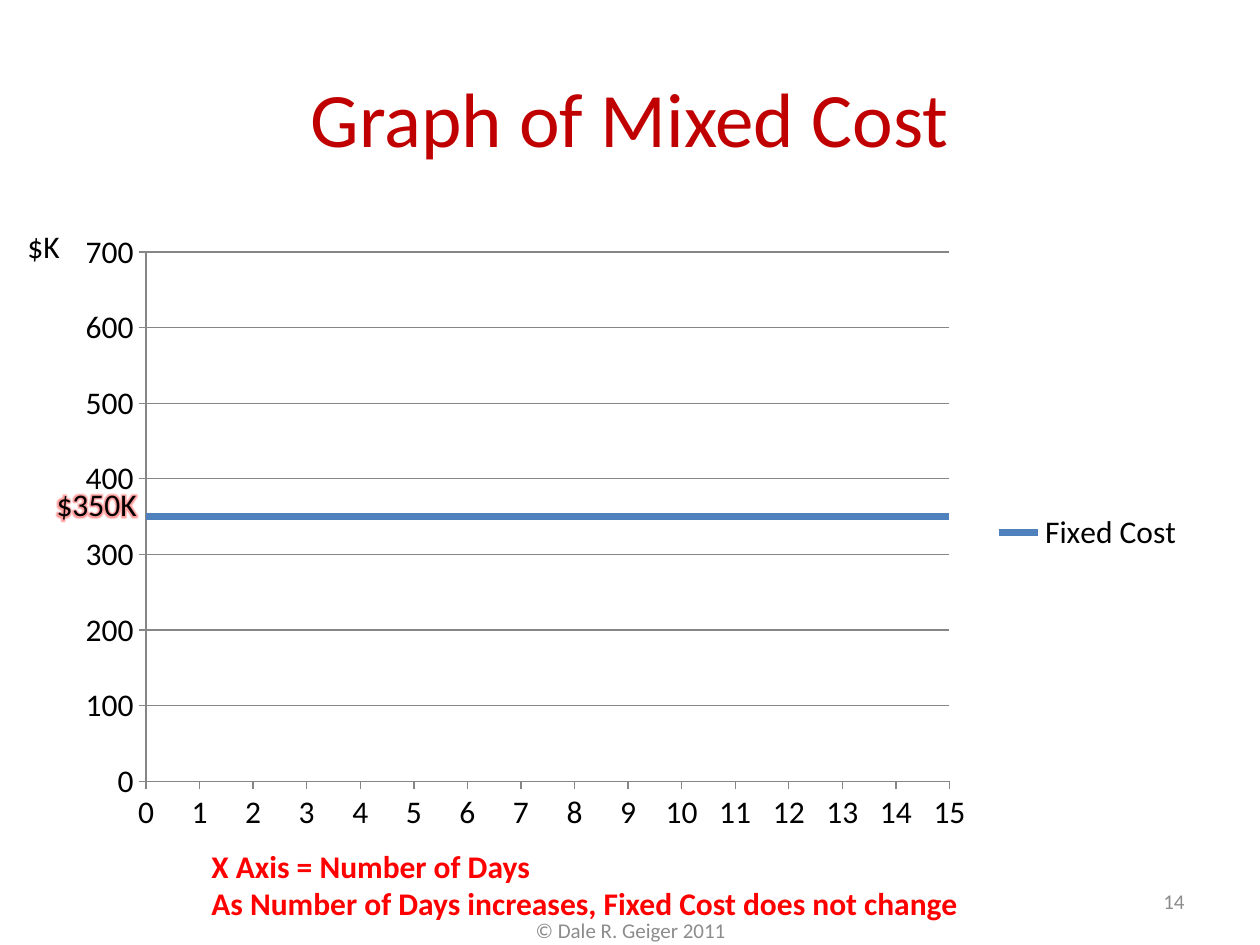
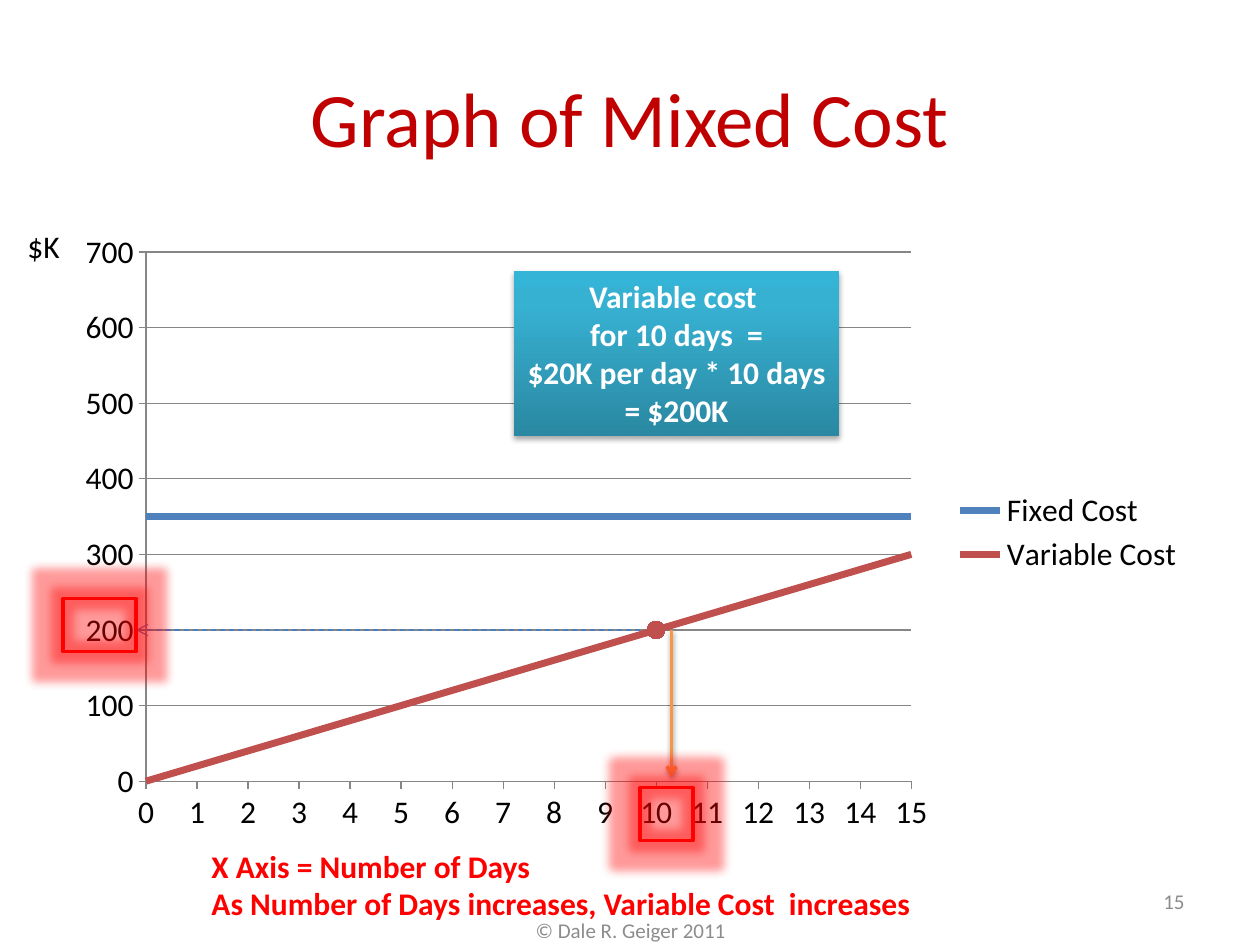
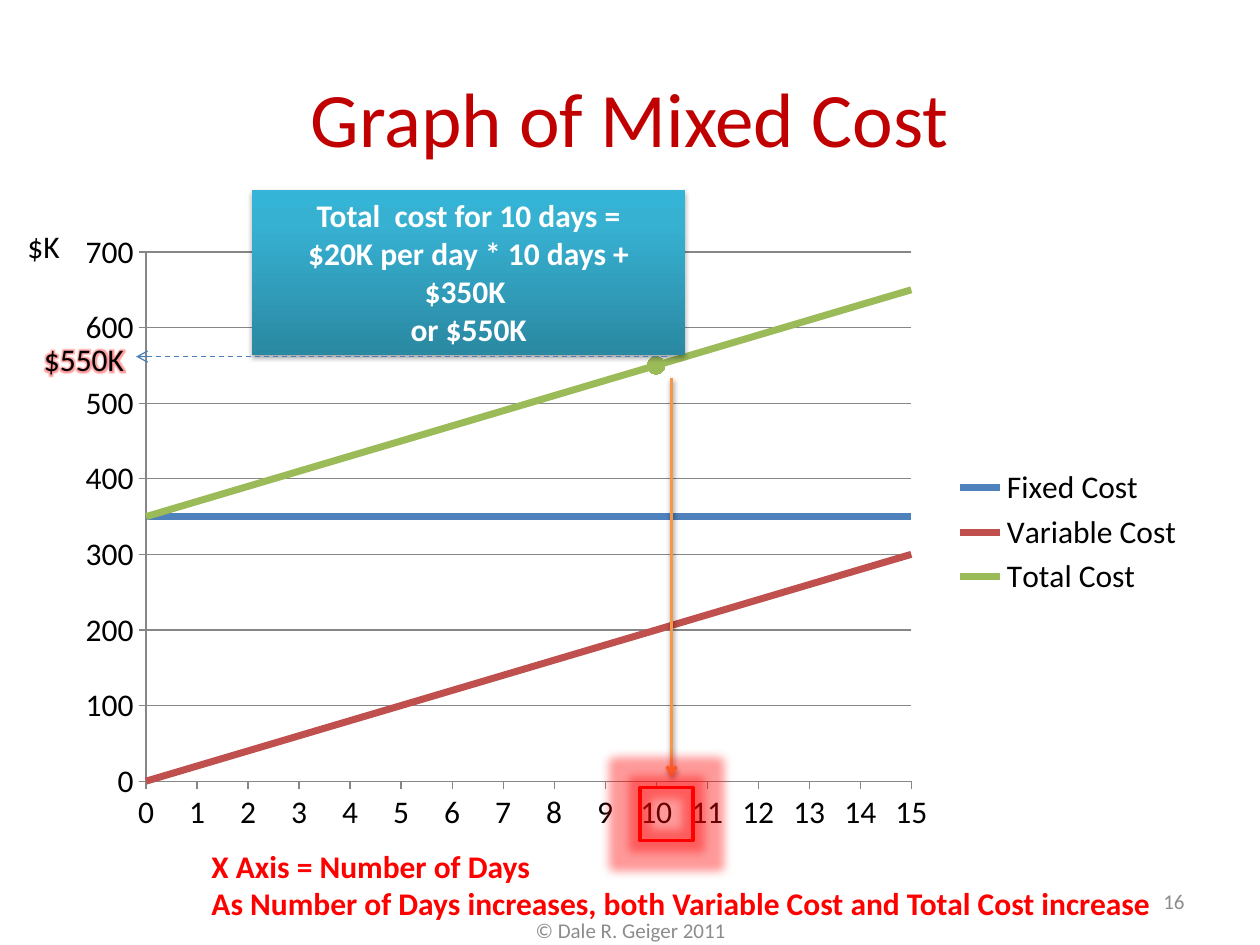
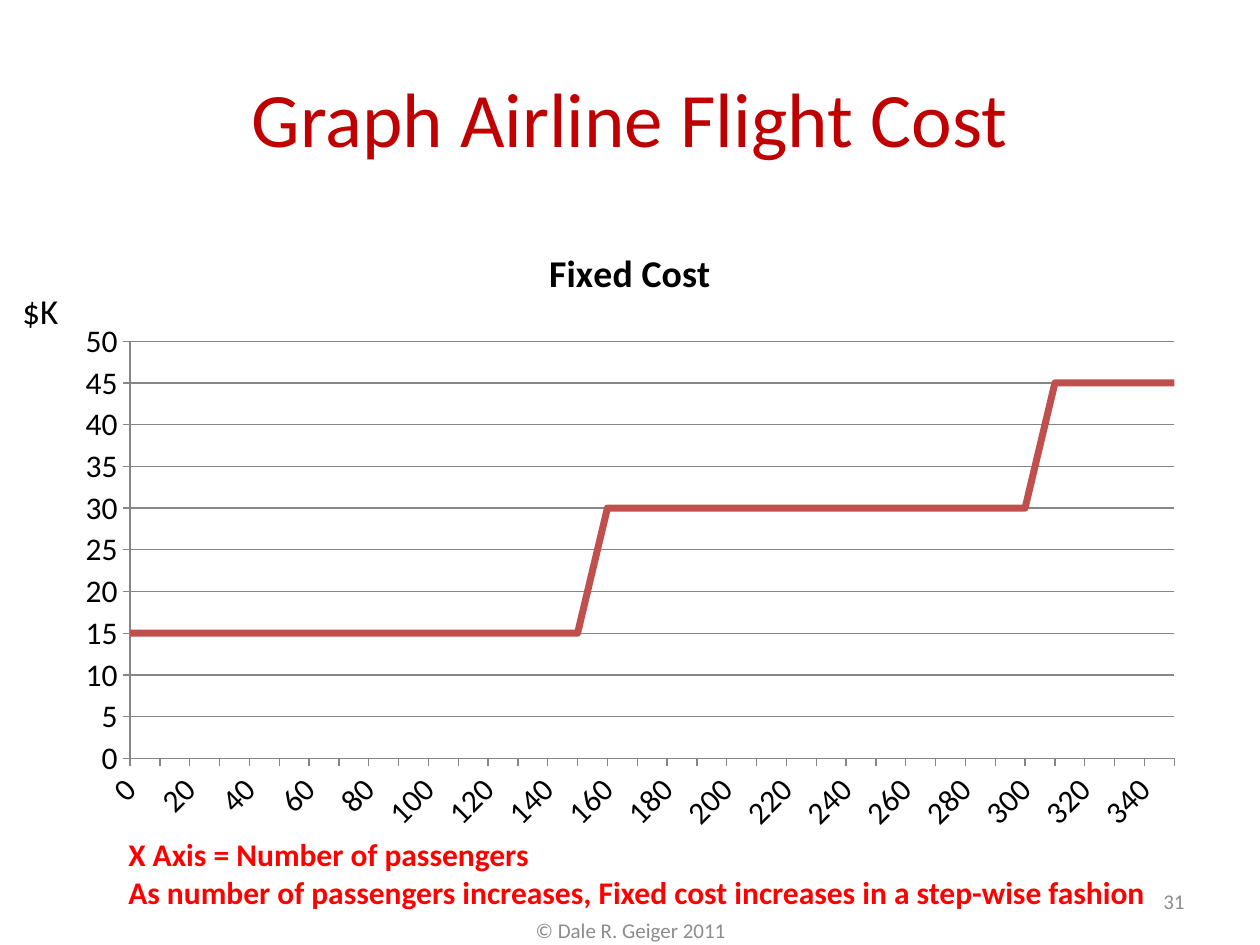
from dataclasses import dataclass
from typing import Any, Optional

from lxml import etree
from pptx import Presentation
from pptx.chart.data import CategoryChartData
from pptx.dml.color import RGBColor
from pptx.enum.chart import XL_CHART_TYPE, XL_LEGEND_POSITION, XL_MARKER_STYLE, XL_TICK_MARK
from pptx.enum.dml import MSO_LINE
from pptx.enum.shapes import MSO_CONNECTOR, MSO_SHAPE
from pptx.enum.text import MSO_ANCHOR, MSO_AUTO_SIZE, PP_ALIGN
from pptx.oxml import parse_xml
from pptx.oxml.ns import qn
from pptx.util import Inches, Pt

LINE_CHART = XL_CHART_TYPE.LINE
LEGEND_RIGHT = XL_LEGEND_POSITION.RIGHT
NO_MARKER, CIRCLE = XL_MARKER_STYLE.NONE, XL_MARKER_STYLE.CIRCLE
TICK_OUT = XL_TICK_MARK.OUTSIDE
DASH = MSO_LINE.DASH
STRAIGHT, RECTANGLE = MSO_CONNECTOR.STRAIGHT, MSO_SHAPE.RECTANGLE
MIDDLE, TOP = MSO_ANCHOR.MIDDLE, MSO_ANCHOR.TOP
FIT_SHAPE = MSO_AUTO_SIZE.SHAPE_TO_FIT_TEXT
LEFT, CENTER, RIGHT = PP_ALIGN.LEFT, PP_ALIGN.CENTER, PP_ALIGN.RIGHT

FONT = "Calibri"
BLACK, WHITE, RED, DARK_RED = "000000", "FFFFFF", "FF0000", "C00000"
GREY, AXIS_GREY = "8C8C8C", "868686"
BLUE, BRICK, GREEN, ORANGE, DASH_BLUE = "4F81BD", "C0504D", "9BBB59", "F79646", "4B7EBC"
CALLOUT_STOPS = ((0, "2A88A2"), (80, "37B1D2"), (100, "34B4D6"))
DRAWING_NS = 'xmlns:a="http://schemas.openxmlformats.org/drawingml/2006/main"'


@dataclass(frozen=True)
class Area:
    left: float
    top: float
    width: float
    height: float

    def lengths(self) -> list:
        return [Inches(n) for n in (self.left, self.top, self.width, self.height)]


@dataclass(frozen=True)
class TextStyle:
    size: float = 18
    color: str = BLACK
    bold: bool = False
    align: Any = LEFT
    anchor: Any = TOP
    wrap: bool = True
    glow: bool = False


@dataclass(frozen=True)
class CostLine:
    name: str
    values: list
    color: str
    marked_day: Optional[int] = None


@dataclass(frozen=True)
class Arrow:
    start: tuple
    end: tuple
    color: str
    width: float
    dashed: bool = False


@dataclass(frozen=True)
class CostPage:
    """A mixed-cost page: its lines and the marks laid over the chart."""
    number: int
    note: str
    note_width: float
    lines: list
    value_label: Optional[tuple] = None
    callout: Optional[tuple] = None
    arrows: tuple = ()
    highlights: tuple = ()


TITLE_AREA = Area(0.5, 0.3, 9, 1.25)
CHART_AREA = Area(0.5, 1.75, 9, 4.95)
FOOTER_AREA = Area(3.42, 7.18, 3.17, 0.4)
NUMBER_AREA = Area(7.17, 6.95, 2.33, 0.4)
DAY_TEN_AREA = Area(5.08, 6.25, 0.42, 0.42)

TITLE_STYLE = TextStyle(44, DARK_RED, align=CENTER, anchor=MIDDLE)
FOOTER_STYLE = TextStyle(12, GREY, align=CENTER, anchor=MIDDLE)
NUMBER_STYLE = TextStyle(12, GREY, align=RIGHT, anchor=MIDDLE)
NOTE_STYLE = TextStyle(color=RED, bold=True, wrap=False)
UNIT_STYLE = TextStyle(wrap=False)
LARGE_UNIT_STYLE = TextStyle(20, wrap=False)
VALUE_STYLE = TextStyle(wrap=False, glow=True)
CALLOUT_STYLE = TextStyle(color=WHITE, bold=True, align=CENTER)


def rgb(color: str) -> RGBColor:
    return RGBColor.from_string(color)


def set_all(target: Any, formats: dict) -> None:
    for name, value in formats.items():
        setattr(target, name, value)


def format_line(line: Any, color: str, width: float) -> None:
    line.color.rgb = rgb(color)
    line.width = Pt(width)


def effects(content: str = "") -> Any:
    return parse_xml(f"<a:effectLst {DRAWING_NS}>{content}</a:effectLst>")


def glow(radius: float) -> Any:
    return effects(f'<a:glow rad="{Pt(radius)}"><a:srgbClr val="{RED}">'
                   '<a:alpha val="40000"/></a:srgbClr></a:glow>')


def shadow(distance: float, opacity: int) -> Any:
    return effects(f'<a:outerShdw blurRad="{Pt(3.1)}" dist="{Pt(distance)}" dir="5400000" '
                   f'rotWithShape="0"><a:srgbClr val="{BLACK}">'
                   f'<a:alpha val="{opacity * 1000}"/></a:srgbClr></a:outerShdw>')


def write_text(shape: Any, text: str, style: TextStyle) -> None:
    frame = shape.text_frame
    frame.text = text
    set_all(frame, {"word_wrap": style.wrap, "vertical_anchor": style.anchor})
    for para in frame.paragraphs:
        para.alignment = style.align
        for span in para.runs:
            set_all(span.font, {"name": FONT, "size": Pt(style.size), "bold": style.bold})
            span.font.color.rgb = rgb(style.color)
            if style.glow:
                span._r.rPr.find(qn("a:solidFill")).addnext(glow(5))


def add_text(page: Any, area: Area, text: str, style: TextStyle) -> None:
    box = page.shapes.add_textbox(*area.lengths())
    write_text(box, text, style)
    if not style.wrap:
        box.text_frame.auto_size = FIT_SHAPE


def add_callout(page: Any, area: Area, text: str) -> None:
    box = page.shapes.add_shape(RECTANGLE, *area.lengths())
    box.line.fill.background()
    box.fill.background()
    stops = "".join(f'<a:gs pos="{position * 1000}"><a:srgbClr val="{color}"/></a:gs>'
                    for position, color in CALLOUT_STOPS)
    gradient = parse_xml(f'<a:gradFill {DRAWING_NS} rotWithShape="1"><a:gsLst>{stops}</a:gsLst>'
                         '<a:lin ang="16200000" scaled="0"/></a:gradFill>')
    properties = box._element.spPr
    properties.replace(properties.find(qn("a:noFill")), gradient)
    properties.append(shadow(1.8, 35))
    write_text(box, text, CALLOUT_STYLE)
    box.text_frame.auto_size = FIT_SHAPE


def add_highlight(page: Any, area: Area) -> None:
    box = page.shapes.add_shape(RECTANGLE, *area.lengths())
    box.fill.background()
    format_line(box.line, RED, 2)
    box._element.spPr.append(glow(11))


def add_arrow(page: Any, arrow: Arrow) -> None:
    connector = page.shapes.add_connector(STRAIGHT, *map(Inches, arrow.start + arrow.end))
    format_line(connector.line, arrow.color, arrow.width)
    if arrow.dashed:
        connector.line.dash_style = DASH
    properties = connector._element.spPr
    etree.SubElement(properties.find(qn("a:ln")), qn("a:tailEnd"), type="arrow")
    properties.append(effects() if arrow.dashed else shadow(1.6, 38))


def add_cost_chart(page: Any, categories: list, lines: list) -> Any:
    data = CategoryChartData()
    data.categories = categories
    for line in lines:
        data.add_series(line.name, line.values)
    chart = page.shapes.add_chart(LINE_CHART, *CHART_AREA.lengths(), data).chart
    set_all(chart.font, {"name": FONT, "size": Pt(18)})
    chart.font.color.rgb = rgb(BLACK)
    chart.plots[0].vary_by_categories = False
    chart.value_axis.has_major_gridlines = True
    format_line(chart.value_axis.major_gridlines.format.line, AXIS_GREY, 0.75)
    for axis in (chart.category_axis, chart.value_axis):
        axis.major_tick_mark = TICK_OUT
        format_line(axis.format.line, AXIS_GREY, 0.75)
    # Lines start on the value axis itself.
    crossing = etree.Element(qn("c:crossBetween"), val="midCat")
    chart.value_axis._element.find(qn("c:crosses")).addnext(crossing)
    for series, line in zip(chart.plots[0].series, lines):
        series.smooth = False
        series.marker.style = NO_MARKER
        format_line(series.format.line, line.color, 4)
        if line.marked_day is not None:
            point = series.points[line.marked_day]
            format_line(point.format.line, line.color, 4)
            set_all(point.marker, {"style": CIRCLE, "size": 10})
            point.marker.format.fill.solid()
            point.marker.format.fill.fore_color.rgb = rgb(line.color)
            format_line(point.marker.format.line, line.color, 0.75)
    return chart


def add_frame(page: Any, title: str, number: int) -> None:
    add_text(page, TITLE_AREA, title, TITLE_STYLE)
    add_text(page, FOOTER_AREA, "© Dale R. Geiger 2011", FOOTER_STYLE)
    add_text(page, NUMBER_AREA, str(number), NUMBER_STYLE)


def draw_mixed_cost(page: Any, content: CostPage) -> None:
    add_frame(page, "Graph of Mixed Cost", content.number)
    chart = add_cost_chart(page, [str(day) for day in DAYS], content.lines)
    set_all(chart, {"has_title": False, "has_legend": True})
    set_all(chart.legend, {"position": LEGEND_RIGHT, "include_in_layout": False})
    set_all(chart.value_axis, {"minimum_scale": 0, "maximum_scale": 700, "major_unit": 100})
    add_text(page, Area(1.58, 6.67, content.note_width, 0.71),
             f"X Axis = Number of Days\nAs Number of Days increases, {content.note}", NOTE_STYLE)
    add_text(page, Area(0.12, 1.75, 0.46, 0.4), "$K", UNIT_STYLE)
    if content.callout:
        add_callout(page, *content.callout)
    for arrow in content.arrows:
        add_arrow(page, arrow)
    for area in content.highlights:
        add_highlight(page, area)
    if content.value_label:
        add_text(page, *content.value_label, VALUE_STYLE)


def draw_flight_cost(page: Any) -> None:
    add_frame(page, "Graph Airline Flight Cost", 31)
    passengers = range(0, 351, 10)
    steps = [15 if count <= 150 else 30 if count <= 300 else 45 for count in passengers]
    chart = add_cost_chart(page, [str(count) for count in passengers],
                           [CostLine("Fixed Cost", steps, BRICK)])
    set_all(chart, {"has_title": True, "has_legend": False})
    chart.chart_title.text_frame.text = "Fixed Cost"
    title_font = chart.chart_title.text_frame.paragraphs[0].runs[0].font
    set_all(title_font, {"name": FONT, "size": Pt(21.6), "bold": True})
    title_font.color.rgb = rgb(BLACK)
    axis = chart.category_axis
    axis.tick_labels.font.size = Pt(18)
    axis._element.find(qn("c:txPr")).find(qn("a:bodyPr")).set("rot", "-2700000")
    label_skip = etree.Element(qn("c:tickLblSkip"), val="2")
    axis._element.find(qn("c:lblOffset")).addnext(label_skip)
    add_text(page, Area(0.08, 2.25, 0.49, 0.44), "$K", LARGE_UNIT_STYLE)
    add_text(page, Area(0.92, 6.58, 8.33, 0.71),
             "X Axis = Number of passengers\nAs number of passengers increases, "
             "Fixed cost increases in a step-wise fashion", NOTE_STYLE)


DAYS = range(16)
FIXED_COST, DAILY_COST = 350, 20
VARIABLE_VALUES = [DAILY_COST * day for day in DAYS]
FIXED = CostLine("Fixed Cost", [FIXED_COST] * len(DAYS), BLUE)
VARIABLE = CostLine("Variable Cost", VARIABLE_VALUES, BRICK)
VARIABLE_MARKED = CostLine("Variable Cost", VARIABLE_VALUES, BRICK, 10)
TOTAL = CostLine("Total Cost", [FIXED_COST + cost for cost in VARIABLE_VALUES], GREEN, 10)

COST_PAGES = [
    CostPage(14, "Fixed Cost does not change", 6.17, [FIXED],
             value_label=(Area(0.35, 3.8, 0.85, 0.4), "$350K")),
    CostPage(15, "Variable Cost  increases", 5.79, [FIXED, VARIABLE_MARKED],
             callout=(Area(4.08, 2.15, 2.58, 1.31),
                      "Variable cost \nfor 10 days  =\n$20K per day * 10 days = $200K"),
             arrows=(Arrow((5.33, 5), (5.33, 6.17), ORANGE, 2),
                     Arrow((5.08, 5), (1.08, 5), DASH_BLUE, 0.75, True)),
             highlights=(Area(0.5, 4.75, 0.58, 0.42), DAY_TEN_AREA)),
    CostPage(16, "both Variable Cost and Total Cost increase", 7.71, [FIXED, VARIABLE, TOTAL],
             value_label=(Area(0.25, 2.65, 0.85, 0.4), "$550K"),
             callout=(Area(2, 1.51, 3.44, 1.31),
                      "Total  cost for 10 days =\v$20K per day * 10 days + $350K \nor $550K"),
             arrows=(Arrow((5.33, 3), (5.33, 6.17), ORANGE, 2),
                     Arrow((5.29, 2.83), (1.08, 2.83), DASH_BLUE, 0.75, True)),
             highlights=(DAY_TEN_AREA,)),
]


def main() -> None:
    deck = Presentation()
    set_all(deck, {"slide_width": Inches(10), "slide_height": Inches(7.5)})
    blank = deck.slide_layouts[6]
    for content in COST_PAGES:
        draw_mixed_cost(deck.slides.add_slide(blank), content)
    draw_flight_cost(deck.slides.add_slide(blank))
    deck.save("out.pptx")


if __name__ == "__main__":
    main()
